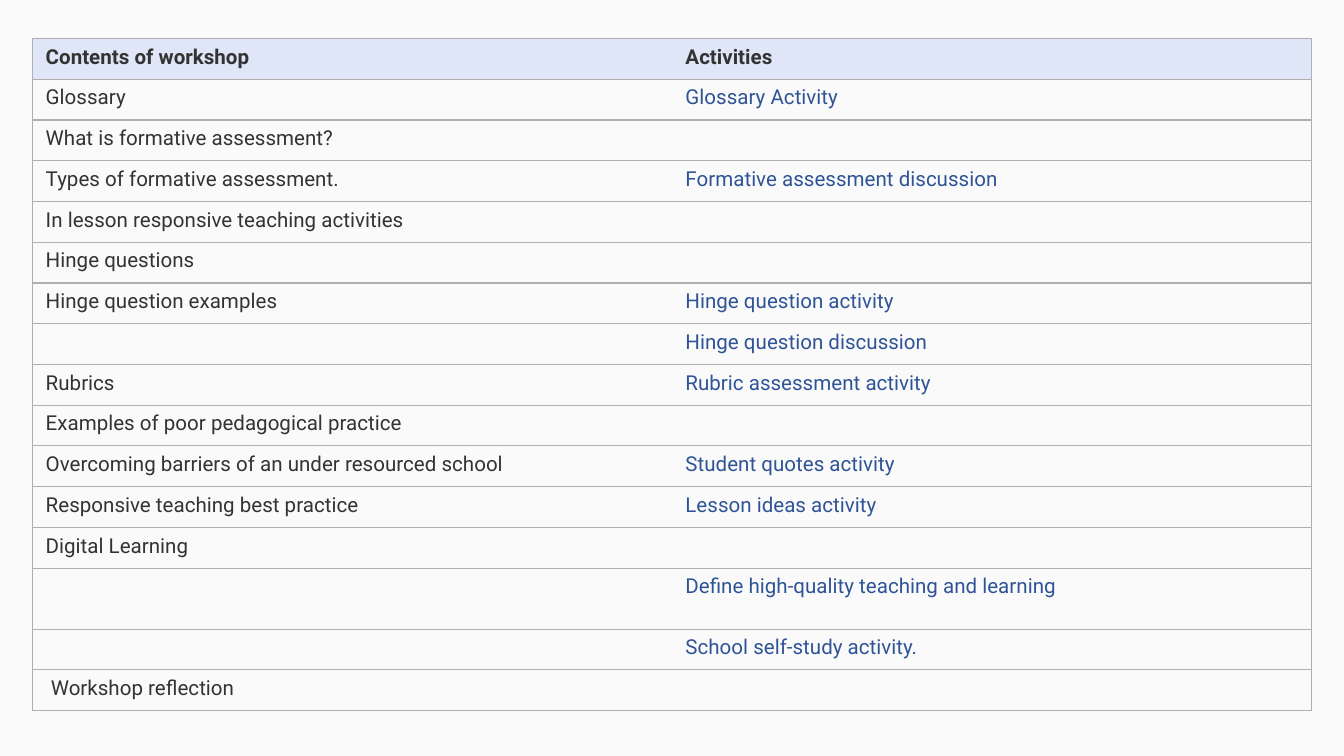
from lxml.etree import SubElement
from pptx import Presentation
from pptx.dml.color import RGBColor
from pptx.oxml.ns import qn
from pptx.util import Pt

BACKGROUND = RGBColor(0xFA, 0xFA, 0xFA)
HEADER_FILL = RGBColor(0xDE, 0xE6, 0xF7)
TEXT = RGBColor(0x33, 0x33, 0x33)
ACTIVITY = RGBColor(0x2F, 0x54, 0x96)
RULE = RGBColor(0xB0, 0xAE, 0xAF)

FONT = "Roboto"
FONT_SIZE = 11
ROW_HEIGHT = 21.83
TALL_ROW, TALL_HEIGHT = 13, 32.7

ROWS = [
    ("Contents of workshop", "Activities"),
    ("Glossary", "Glossary Activity"),
    ("What is formative assessment?", ""),
    ("Types of formative assessment.", "Formative assessment discussion"),
    ("In lesson responsive teaching activities", ""),
    ("Hinge questions", ""),
    ("Hinge question examples", "Hinge question activity"),
    ("", "Hinge question discussion"),
    ("Rubrics", "Rubric assessment activity"),
    ("Examples of poor pedagogical practice", ""),
    ("Overcoming barriers of an under resourced school", "Student quotes activity"),
    ("Responsive teaching best practice", "Lesson ideas activity"),
    ("Digital Learning", ""),
    ("", "Define high-quality teaching and learning"),
    ("", "School self-study activity."),
    (" Workshop reflection", ""),
]


def set_borders(cell, visible):
    tcPr = cell._tc.get_or_add_tcPr()
    for side in "LRTB":
        ln = SubElement(tcPr, qn(f"a:ln{side}"), w=str(Pt(0.75)))
        if side in visible:
            fill = SubElement(ln, qn("a:solidFill"))
            SubElement(fill, qn("a:srgbClr"), val=str(RULE))
        else:
            SubElement(ln, qn("a:noFill"))


def write_cell(cell, text, color, bold):
    cell.margin_left = cell.margin_right = Pt(7.2)
    cell.margin_top = cell.margin_bottom = Pt(3.6)
    p = cell.text_frame.paragraphs[0]
    if text:
        p.add_run().text = text
    else:
        SubElement(p._p, qn("a:endParaRPr"), sz=str(FONT_SIZE * 100))
    p.font.name = FONT
    p.font.size = Pt(FONT_SIZE)
    p.font.bold = bold
    p.font.color.rgb = color


def add_contents_table(slide, left, top, width, height):
    table = slide.shapes.add_table(len(ROWS), 2, left, top, width, height).table
    table.first_row = table.horz_banding = False
    for column in table.columns:
        column.width = width // 2
    for i, texts in enumerate(ROWS):
        header = i == 0
        table.rows[i].height = Pt(TALL_HEIGHT if i == TALL_ROW else ROW_HEIGHT)
        for j, text in enumerate(texts):
            cell = table.cell(i, j)
            set_borders(cell, "TB" + "LR"[j])
            if header:
                cell.fill.solid()
                cell.fill.fore_color.rgb = HEADER_FILL
            else:
                cell.fill.background()
            color = ACTIVITY if j == 1 and not header else TEXT
            write_cell(cell, text, color, header)


def main():
    prs = Presentation()
    prs.slide_width, prs.slide_height = Pt(720), Pt(405)
    s = prs.slides.add_slide(prs.slide_layouts[6])
    s.background.fill.solid()
    s.background.fill.fore_color.rgb = BACKGROUND
    add_contents_table(s, Pt(17.28), Pt(20.6), Pt(685.44), Pt(360.15))
    prs.save("out.pptx")


if __name__ == "__main__":
    main()
